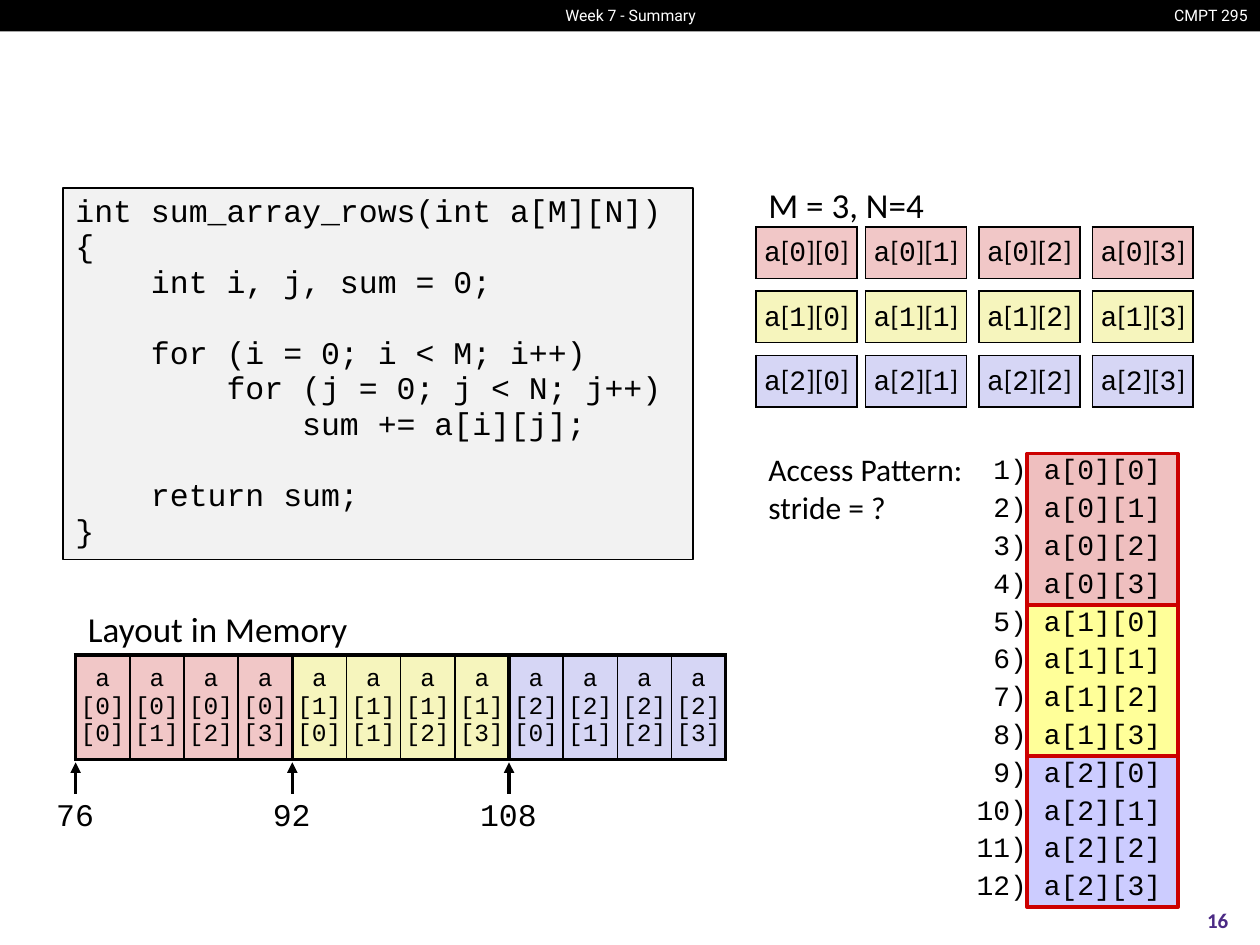
from lxml import etree
from pptx import Presentation
from pptx.dml.color import RGBColor
from pptx.enum.shapes import MSO_CONNECTOR as Link, MSO_SHAPE as Shape
from pptx.enum.text import MSO_ANCHOR as Anchor, PP_ALIGN as Align
from pptx.oxml.ns import qn
from pptx.util import Inches, Pt

HEX = {
    "black": "000000", "white": "FFFFFF", "code": "F2F2F2",
    "red": "CC0000", "page": "4B2A85",
}
PALE = ["F1C7C7", "F6F5BD", "D6D6F5"]
BRIGHT = ["EFBFBF", "FFFF99", "CCCCFF"]
SANS, MONO, HEAD = "Calibri", "Courier New", "Roboto"
NO_STYLE = "{2D5ABB26-0587-4C30-8999-92F81FD0307C}"
ROWS, COLS = 3, 4
CODE = [  # indent level, blank lines above, text
    (0, 0, "int sum_array_rows(int a[M][N])"),
    (0, 0, "{"),
    (1, 0, "int i, j, sum = 0;"),
    (1, 1, "for (i = 0; i < M; i++)"),
    (2, 0, "for (j = 0; j < N; j++)"),
    (3, 0, "sum += a[i][j];"),
    (1, 1, "return sum;"),
    (0, 0, "}"),
]


def rgb(name):
    return RGBColor.from_string(HEX.get(name, name))


def write(para, text, size=18, font=MONO, color="black", bold=False,
          align=Align.LEFT):
    para.alignment = align
    run = para.add_run()
    run.text = text
    run.font.size = Pt(size)
    run.font.name = font
    run.font.bold = bold
    run.font.color.rgb = rgb(color)


def add_label(slide, x, y, w, h, *lines, anchor=Anchor.TOP, **style):
    frame = slide.shapes.add_textbox(
        Inches(x), Inches(y), Inches(w), Inches(h)).text_frame
    frame.word_wrap = False
    frame.vertical_anchor = anchor
    for i, line in enumerate(lines):
        para = frame.add_paragraph() if i else frame.paragraphs[0]
        write(para, line, **style)


def add_box(slide, x, y, w, h, fill, line=None, width=1):
    box = slide.shapes.add_shape(
        Shape.RECTANGLE, Inches(x), Inches(y), Inches(w), Inches(h))
    box.shadow.inherit = False
    box.fill.solid()
    box.fill.fore_color.rgb = rgb(fill)
    if line:
        box.line.color.rgb = rgb(line)
        box.line.width = Pt(width)
    else:
        box.line.fill.background()
    return box


def add_grid(slide, x, y, widths, heights):
    """Add an unstyled table with bare, tightly set cells."""
    frame = slide.shapes.add_table(
        len(heights), len(widths), Inches(x), Inches(y),
        Inches(sum(widths)), Inches(sum(heights)))
    grid = frame.table
    grid.first_row = grid.horz_banding = False
    next(frame.element.iter(qn("a:tableStyleId"))).text = NO_STYLE
    for col, width in zip(grid.columns, widths):
        col.width = Inches(width)
    for row, height in zip(grid.rows, heights):
        row.height = Inches(height)
    for cell in grid.iter_cells():
        cell.margin_left = cell.margin_right = 0
        cell.margin_top = cell.margin_bottom = 0
        cell.vertical_anchor = Anchor.MIDDLE
        cell.fill.background()
        cell.text_frame.paragraphs[0].font.size = Pt(1)
    return grid


def set_edges(cell, **widths):
    props = cell._tc.get_or_add_tcPr()
    sides = [side for side in "LRTB" if side in widths]
    for i, side in enumerate(sides):
        line = etree.Element(qn(f"a:ln{side}"), w=str(Pt(widths[side])))
        fill = etree.SubElement(line, qn("a:solidFill"))
        etree.SubElement(fill, qn("a:srgbClr"), val=HEX["black"])
        props.insert(i, line)


def paint(cell, color):
    cell.fill.solid()
    cell.fill.fore_color.rgb = rgb(color)


def add_header(slide, x, y, w, h):
    add_box(slide, x, y, w, h, "black")
    style = dict(size=9, font=HEAD, color="white")
    add_label(slide, x + w - 0.81, y, 0.81, h, "CMPT 295",
              align=Align.RIGHT, **style)
    add_label(slide, x + w / 2 - 0.7, y, 1.41, h, "Week 7 - Summary",
              align=Align.CENTER, **style)


def add_code(slide, x, y, w, h):
    frame = add_box(slide, x, y, w, h, "code", "black").text_frame
    frame.word_wrap = True
    frame.vertical_anchor = Anchor.TOP
    for i, (level, blank, text) in enumerate(CODE):
        para = frame.add_paragraph() if i else frame.paragraphs[0]
        para.line_spacing = 0.94
        para.space_before = Pt(20.3 * blank)
        para._p.get_or_add_pPr().set("marL", str(Inches(0.6 * level)))
        write(para, text)


def add_matrix(slide, x, y):
    add_label(slide, x, y, 1.46, 0.44, "M = 3, N=4", size=20, font=SANS)
    grid = add_grid(slide, x, y + 0.39, [0.8, 0.07, 0.8, 0.1, 0.8, 0.1, 0.8],
                    [0.41, 0.1, 0.41, 0.1, 0.41])
    for r in range(2 * ROWS - 1):
        for c in range(2 * COLS - 1):
            cell = grid.cell(r, c)
            if r % 2 and c % 2:
                continue
            if r % 2:
                set_edges(cell, T=1, B=1)
            elif c % 2:
                set_edges(cell, L=1, R=1)
            else:
                set_edges(cell, L=1, R=1, T=1, B=1)
                paint(cell, PALE[r // 2])
                para = cell.text_frame.paragraphs[0]
                for part in ("a", "[", str(r // 2), "][", str(c // 2), "]"):
                    font = SANS if part in ("[", "][", "]") else MONO
                    write(para, part, size=16, font=font, align=Align.CENTER)


def add_memory(slide, x, y):
    add_label(slide, x, y, 2.33, 0.44, "Layout in Memory", size=20, font=SANS)
    step = 0.43
    grid = add_grid(slide, x, y + 0.43, [step] * ROWS * COLS, [0.83])
    for i in range(ROWS * COLS):
        r, c = divmod(i, COLS)
        cell = grid.cell(0, i)
        set_edges(cell, L=1 if c else 2.25, R=2.25 if c == COLS - 1 else 1,
                  T=2.25, B=2.25)
        paint(cell, PALE[r])
        write(cell.text_frame.paragraphs[0], f"a [{r}] [{c}]", size=14,
              align=Align.CENTER)
    for r in range(ROWS):
        mark = x + r * COLS * step
        add_arrow(slide, mark, y + 1.53, y + 1.28)
        add_label(slide, mark - 0.33, y + 1.49, 0.65, 0.4,
                  str(76 + 16 * r), align=Align.CENTER)


def add_arrow(slide, x, start, end):
    arrow = slide.shapes.add_connector(
        Link.STRAIGHT, Inches(x), Inches(start), Inches(x), Inches(end))
    arrow.line.color.rgb = rgb("black")
    arrow.line.width = Pt(2)
    etree.SubElement(arrow.line._get_or_add_ln(), qn("a:tailEnd"),
                     type="triangle")
    etree.SubElement(arrow._element.spPr, qn("a:effectLst"))


def add_access(slide, x, y):
    add_label(slide, x, y - 0.08, 1.79, 0.71, "Access Pattern:",
              "stride = ?", font=SANS)
    for r, color in enumerate(BRIGHT):
        add_box(slide, x + 2.15, y + 1.2 * r, 1.2, 1.2, color, "red", 2)
    grid = add_grid(slide, x + 1.65, y, [0.5, 1.2], [0.3] * ROWS * COLS)
    for i in range(ROWS * COLS):
        r, c = divmod(i, COLS)
        write(grid.cell(i, 0).text_frame.paragraphs[0], f"{i + 1})",
              size=16, align=Align.RIGHT)
        write(grid.cell(i, 1).text_frame.paragraphs[0], f"a[{r}][{c}]",
              size=16, align=Align.CENTER)


def main():
    deck = Presentation()
    deck.slide_width, deck.slide_height = Inches(10), Inches(7.5)
    slide = deck.slides.add_slide(deck.slide_layouts[6])
    add_header(slide, 0, 0, 10, 0.25)
    add_code(slide, 0.5, 1.49, 5, 2.95)
    add_matrix(slide, 6, 1.41)
    add_memory(slide, 0.6, 4.77)
    add_access(slide, 6, 3.6)
    add_label(slide, 9.33, 7.1, 0.67, 0.4, "16", anchor=Anchor.MIDDLE,
              size=12, font=SANS, color="page", bold=True,
              align=Align.CENTER)
    deck.save("out.pptx")


if __name__ == "__main__":
    main()
